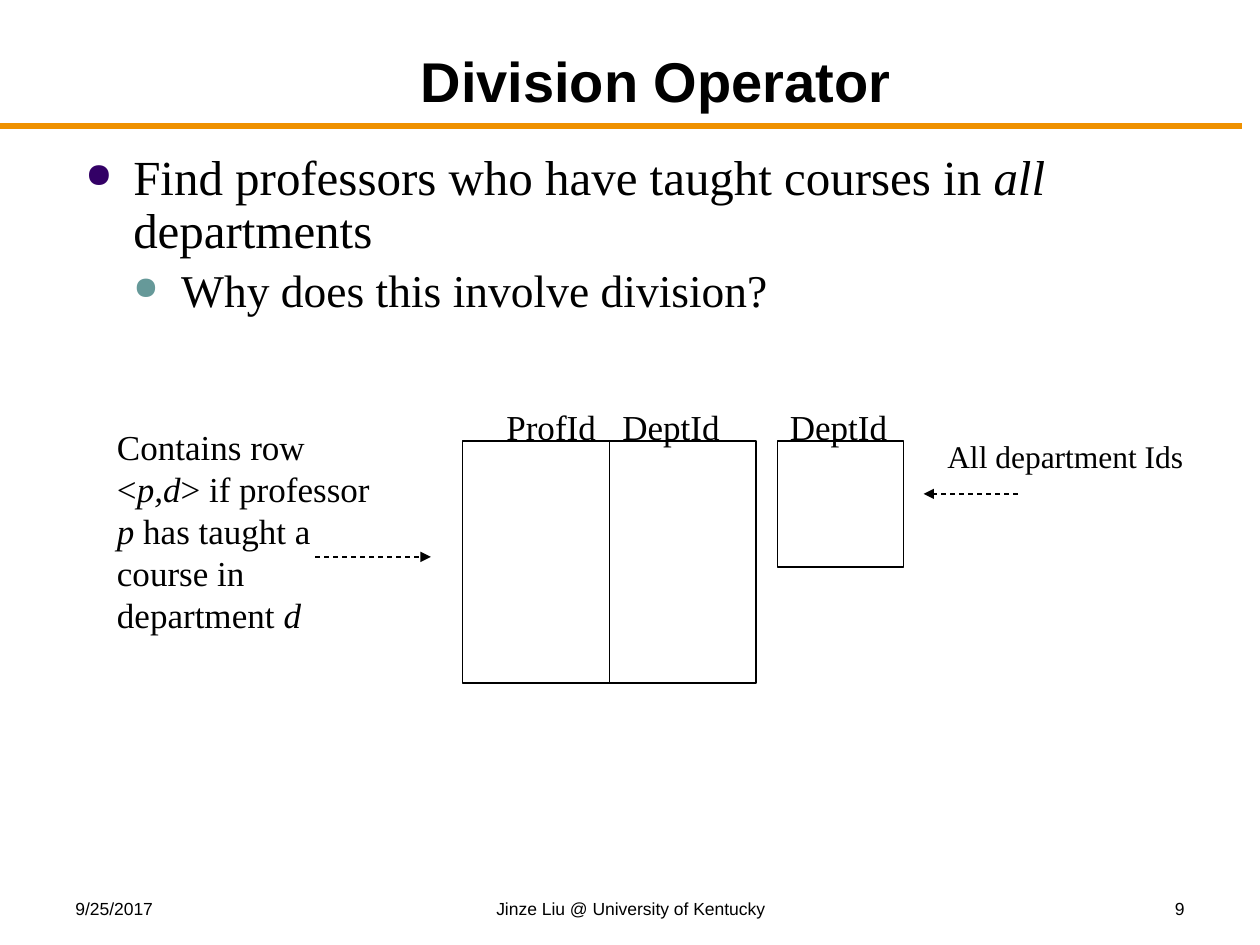
from dataclasses import dataclass

from lxml.etree import SubElement
from pptx import Presentation
from pptx.dml.color import RGBColor
from pptx.enum.dml import MSO_LINE_DASH_STYLE as Dash
from pptx.enum.shapes import MSO_CONNECTOR as Connector, MSO_SHAPE as Shape
from pptx.enum.text import MSO_ANCHOR as Anchor, MSO_AUTO_SIZE as AutoSize, PP_ALIGN as Align
from pptx.oxml.ns import qn
from pptx.util import Inches, Pt


@dataclass(frozen=True)
class Theme:
    ink: str = "000000"
    paper: str = "FFFFFF"
    rule: str = "EF9100"
    bullets: tuple = ("330066", "669999")
    heading_font: str = "Arial"
    body_font: str = "Times New Roman"
    title: int = 32
    levels: tuple = (28, 26)
    label: int = 20
    note: int = 18
    footer: int = 10
    rule_width: float = 3
    line_width: float = 0.75


THEME = Theme()


def apply(target, values):
    for name, value in values.items():
        setattr(target, name, value)


def add_xml(parent, tag, **values):
    return SubElement(parent, qn(tag), values)


def add_spans(para, spans, size, font, bold=False):
    for text, italic in spans:
        span = para.add_run()
        span.text = text
        apply(span.font, {"size": Pt(size), "name": font, "bold": bold, "italic": italic})
        span.font.color.rgb = RGBColor.from_string(THEME.ink)


def add_box(page, place, **frame):
    box = page.shapes.add_textbox(*map(Inches, place))
    apply(box.text_frame, {"word_wrap": True, **frame})
    return box.text_frame


def next_para(frame, index):
    return frame.add_paragraph() if index else frame.paragraphs[0]


def add_line_of_text(page, place, text, size, align, bold=False, **frame):
    para = add_box(page, place, **frame).paragraphs[0]
    para.alignment = align
    add_spans(para, [(text, False)], size, THEME.heading_font, bold)


def add_label(page, place, lines, size=THEME.label, tab=None):
    frame = add_box(page, place, word_wrap=False, auto_size=AutoSize.SHAPE_TO_FIT_TEXT)
    for index, spans in enumerate(lines):
        para = next_para(frame, index)
        add_spans(para, spans, size, THEME.body_font)
        if tab:
            stops = add_xml(para._p.get_or_add_pPr(), "a:tabLst")
            add_xml(stops, "a:tab", pos=str(Inches(tab)), algn="l")


def add_bullets(page, place, items):
    frame = add_box(page, place)
    indent = Inches(0.38)
    for level, spans in enumerate(items):
        para = next_para(frame, level)
        size = THEME.levels[level]
        apply(para, {"level": level, "line_spacing": 0.9, "space_before": Pt(size * 0.2)})
        add_spans(para, spans, size, THEME.body_font)
        props = para._p.get_or_add_pPr()
        props.set("marL", str(indent * (level + 1)))
        props.set("indent", str(-indent))
        add_xml(add_xml(props, "a:buClr"), "a:srgbClr", val=THEME.bullets[level])
        add_xml(props, "a:buSzPct", val="70000")
        add_xml(props, "a:buChar", char="●")


def add_relation(page, place):
    box = page.shapes.add_shape(Shape.RECTANGLE, *map(Inches, place))
    box.shadow.inherit = False
    box.fill.solid()
    box.fill.fore_color.rgb = RGBColor.from_string(THEME.paper)
    box.line.color.rgb = RGBColor.from_string(THEME.ink)
    box.line.width = Pt(THEME.line_width)
    return box


def add_line(page, ends, color=THEME.ink, width=THEME.line_width):
    line = page.shapes.add_connector(Connector.STRAIGHT, *map(Inches, ends))
    line.line.color.rgb = RGBColor.from_string(color)
    line.line.width = Pt(width)
    add_xml(line._element.spPr, "a:effectLst")
    return line


def add_arrow(page, ends):
    arrow = add_line(page, ends)
    arrow.line.dash_style = Dash.DASH
    add_xml(arrow.line._get_or_add_ln(), "a:tailEnd", type="triangle")


def add_divider(page, box):
    divider = add_line(page, (4.83, 3.5, 4.83, 5.42))
    divider.begin_connect(box, 0)
    divider.end_connect(box, 2)


def main():
    deck = Presentation()
    apply(deck, {"slide_width": Inches(10), "slide_height": Inches(7.5)})
    page = deck.slides.add_slide(deck.slide_layouts[6])

    add_line(page, (0, 1, 9.86, 1), THEME.rule, THEME.rule_width)
    add_line_of_text(page, (1.08, 0.25, 8.25, 0.7), "Division Operator", THEME.title,
                     Align.CENTER, bold=True, vertical_anchor=Anchor.BOTTOM)
    for left, width, text, align in (
        (0.5, 2.33, "9/25/2017", Align.LEFT),
        (3.42, 3.17, "Jinze Liu @ University of Kentucky", Align.CENTER),
        (7.17, 2.33, "9", Align.RIGHT),
    ):
        add_line_of_text(page, (left, 7.08, width, 0.25), text, THEME.footer, align)

    add_bullets(page, (0.58, 1.17, 8.67, 2.83), [
        [("Find professors who have taught courses in ", False), ("all", True),
         (" departments", False)],
        [("Why does this involve division?", False)],
    ])

    taught = add_relation(page, (3.67, 3.5, 2.33, 1.92))
    add_label(page, (3.92, 3.17, 1.91, 0.44), [[("ProfId\tDeptId", False)]], tab=0.92)
    add_relation(page, (6.17, 3.5, 1, 1))
    add_label(page, (6.17, 3.17, 0.98, 0.44), [[("DeptId", False)]])
    add_label(page, (7.42, 3.42, 2.1, 0.4), [[("All department Ids", False)]], THEME.note)
    add_label(page, (0.83, 3.33, 2.22, 1.78), [
        [("Contains row", False)],
        [("<", False), ("p,d", True), ("> if professor", False)],
        [("p", True), (" has taught a", False)],
        [("course in", False)],
        [("department ", False), ("d", True)],
    ])

    add_divider(page, taught)
    add_arrow(page, (2.5, 4.42, 3.42, 4.42))
    add_arrow(page, (8.08, 3.92, 7.33, 3.92))
    deck.save("out.pptx")


if __name__ == "__main__":
    main()
